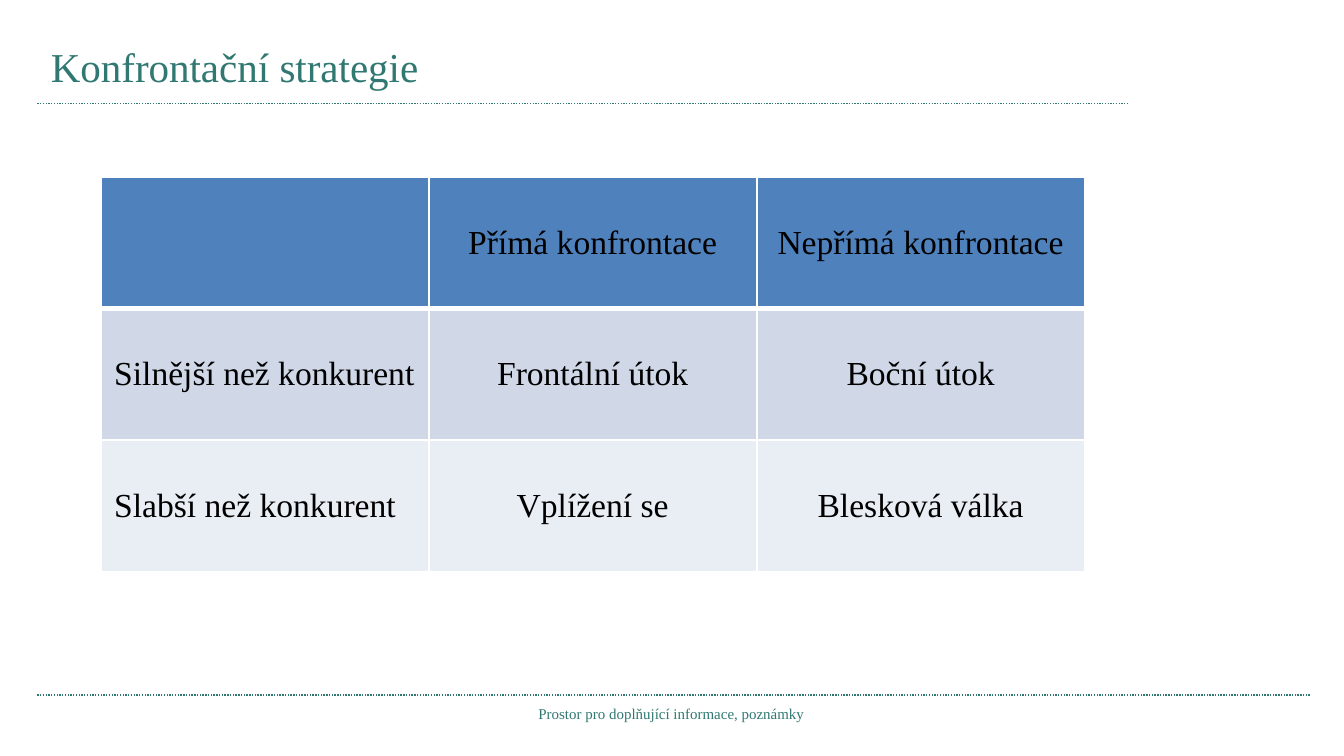
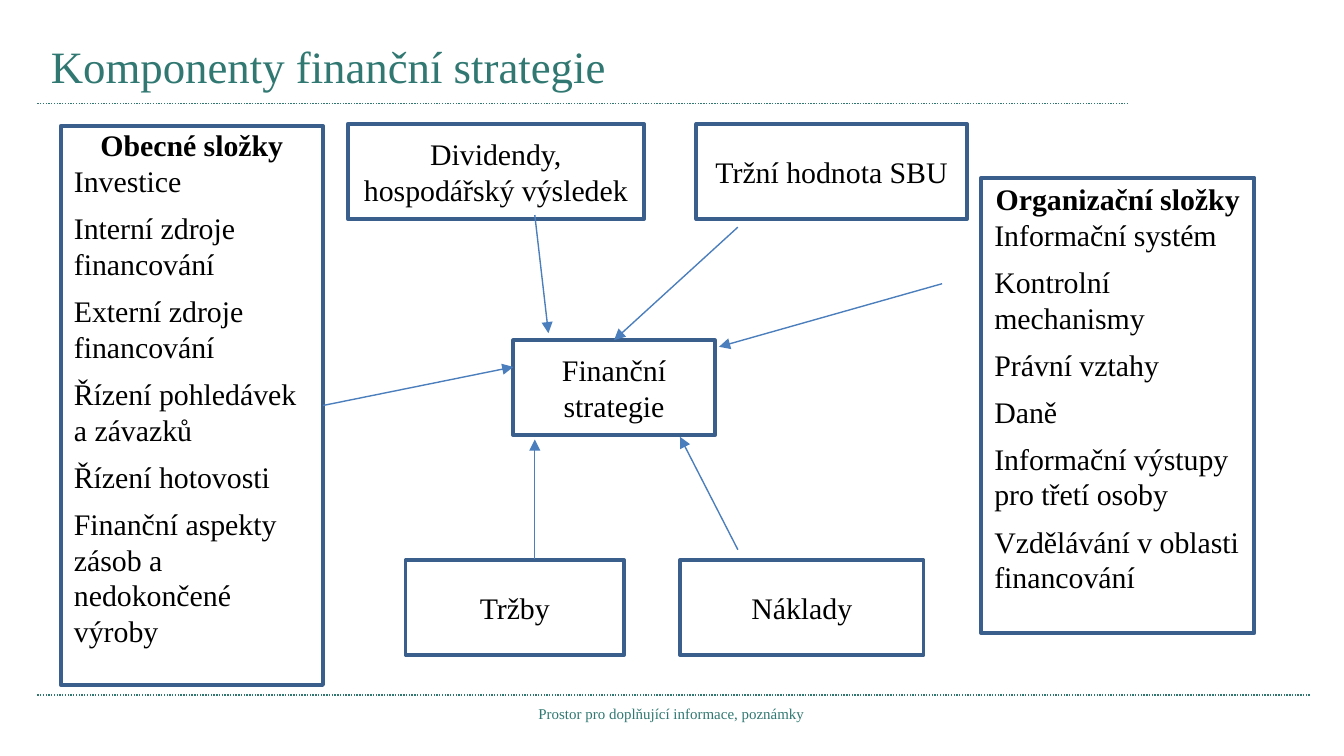
from lxml.etree import SubElement
from pptx import Presentation
from pptx.dml.color import RGBColor
from pptx.enum.dml import MSO_LINE
from pptx.enum.shapes import MSO_CONNECTOR, MSO_SHAPE
from pptx.enum.text import MSO_ANCHOR, PP_ALIGN
from pptx.oxml.ns import qn
from pptx.util import Pt

GREEN = RGBColor(0x30, 0x78, 0x71)
BLACK = RGBColor(0x00, 0x00, 0x00)
WHITE = "FFFFFF"
HEADER_BLUE = RGBColor(0x4F, 0x81, 0xBD)
ROW_DARK = RGBColor(0xD0, 0xD8, 0xE8)
ROW_LIGHT = RGBColor(0xE9, 0xED, 0xF4)
BOX_BLUE = RGBColor(0x3A, 0x5F, 0x8C)
ARROW_BLUE = RGBColor(0x4B, 0x7E, 0xBC)
FONT = "Times New Roman"


def add_run(paragraph, text, size, color=BLACK, bold=False):
    run = paragraph.add_run()
    run.text = text
    run.font.name = FONT
    run.font.size = Pt(size)
    run.font.bold = bold
    run.font.color.rgb = color


def add_line(slide, x1, y1, x2, y2, color):
    line = slide.shapes.add_connector(
        MSO_CONNECTOR.STRAIGHT, Pt(x1), Pt(y1), Pt(x2), Pt(y2))
    line.line.color.rgb = color
    line.line.width = Pt(0.75)
    SubElement(line._element.spPr, qn("a:effectLst"))
    return line


prs = Presentation()
prs.slide_width, prs.slide_height = Pt(720), Pt(405)

# Shared frame: title, dotted rules, footer
pages = []
for heading, size, width in [("Konfrontační strategie", 22, 595.5),
                             ("Komponenty finanční strategie", 24, 521.5)]:
    page = prs.slides.add_slide(prs.slide_layouts[5])
    for y, right in [(55.4, 604), (372.4, 702)]:
        rule = add_line(page, 20, y, right, y, GREEN)
        rule.line.dash_style = MSO_LINE.ROUND_DOT

    footer = page.shapes.add_textbox(Pt(212.5), Pt(372.4), Pt(294.5), Pt(16.5))
    footer.text_frame.word_wrap = True
    footer.text_frame.margin_top = Pt(5)
    note = footer.text_frame.paragraphs[0]
    note.alignment = PP_ALIGN.CENTER
    add_run(note, "Prostor pro doplňující informace, poznámky", 8, GREEN)

    title = page.shapes.title
    title.left, title.top, title.width, title.height = Pt(20), Pt(15), Pt(width), Pt(40.5)
    title.text_frame.vertical_anchor = MSO_ANCHOR.MIDDLE
    title.text_frame.paragraphs[0].alignment = PP_ALIGN.LEFT
    add_run(title.text_frame.paragraphs[0], heading, size, GREEN)
    pages.append(page)

confrontation, finance = pages

# Slide 1: confrontation matrix
matrix_rows = [
    (HEADER_BLUE, ["", "Přímá konfrontace", "Nepřímá konfrontace"]),
    (ROW_DARK, ["Silnější než konkurent", "Frontální útok", "Boční útok"]),
    (ROW_LIGHT, ["Slabší než konkurent", "Vplížení se", "Blesková válka"]),
]
matrix = confrontation.shapes.add_table(
    3, 3, Pt(54), Pt(95.2), Pt(527.1), Pt(210.9)).table
for r, (fill, texts) in enumerate(matrix_rows):
    for c, text in enumerate(texts):
        cell = matrix.cell(r, c)
        cell.vertical_anchor = MSO_ANCHOR.MIDDLE
        for side in ("lnL", "lnR", "lnT", "lnB"):
            weight = 3 if (r, side) == (0, "lnB") else 1
            border = SubElement(cell._tc.get_or_add_tcPr(), qn("a:" + side),
                                w=str(Pt(weight)))
            SubElement(SubElement(border, qn("a:solidFill")),
                       qn("a:srgbClr"), val=WHITE)
        cell.fill.solid()
        cell.fill.fore_color.rgb = fill
        if text:
            entry = cell.text_frame.paragraphs[0]
            entry.alignment = PP_ALIGN.CENTER if c else PP_ALIGN.LEFT
            add_run(entry, text, 18)

# Slide 2: components around the financial strategy
general_items = [
    "Investice", "Interní zdroje financování", "Externí zdroje financování",
    "Řízení pohledávek a závazků", "Řízení hotovosti",
    "Finanční aspekty zásob a nedokončené výroby"]
organization_items = [
    "Informační systém", "Kontrolní mechanismy", "Právní vztahy", "Daně",
    "Informační výstupy pro třetí osoby", "Vzdělávání v oblasti financování"]
components = [
    ("Finanční strategie", 275, 182.2, 108, 51, []),
    ("Organizační složky", 525.6, 95.2, 146.4, 244, organization_items),
    ("Tržní hodnota SBU", 373, 66.4, 145, 51, []),
    ("Dividendy, hospodářský výsledek", 186.3, 66.4, 158.7, 51, []),
    ("Obecné složky", 32.5, 67.5, 140.5, 299.5, general_items),
    ("Náklady", 364.3, 300, 130.5, 51, []),
    ("Tržby", 217.3, 300, 117, 51, []),
]
boxes = {}
for name, x, y, width, height, items in components:
    box = finance.shapes.add_shape(
        MSO_SHAPE.RECTANGLE, Pt(x), Pt(y), Pt(width), Pt(height))
    box.shadow.inherit = False
    box.fill.background()
    box.line.color.rgb = BOX_BLUE
    box.line.width = Pt(2)
    frame = box.text_frame
    frame.word_wrap = True
    frame.vertical_anchor = MSO_ANCHOR.MIDDLE
    if items:
        frame.margin_bottom = Pt(22.5)
    frame.paragraphs[0].alignment = PP_ALIGN.CENTER
    add_run(frame.paragraphs[0], name, 16, bold=bool(items))
    for item in items:
        part = frame.add_paragraph()
        part.alignment = PP_ALIGN.LEFT
        part.space_after = Pt(6)
        add_run(part, item, 16)
    boxes[name] = box

# Arrows pointing to the strategy
arrows = {}
for source, x1, y1, x2, y2 in [
        ("Tržby", 286.5, 299.5, 286.5, 235.5),
        ("Náklady", 395.3, 294.5, 364.3, 234),
        ("Organizační složky", 504.7, 152, 385.2, 185.8),
        ("Dividendy, hospodářský výsledek", 286.5, 115.2, 293.8, 178.5),
        ("Tržní hodnota SBU", 395.3, 121.7, 330.5, 180.7),
        ("Obecné složky", 173.5, 217.4, 275, 196.6)]:
    arrow = add_line(finance, x1, y1, x2, y2, ARROW_BLUE)
    SubElement(arrow.line._get_or_add_ln(), qn("a:tailEnd"), type="triangle")
    arrows[source] = arrow
arrows["Obecné složky"].begin_connect(boxes["Obecné složky"], 3)
arrows["Tržní hodnota SBU"].end_connect(boxes["Finanční strategie"], 0)

prs.save("out.pptx")
